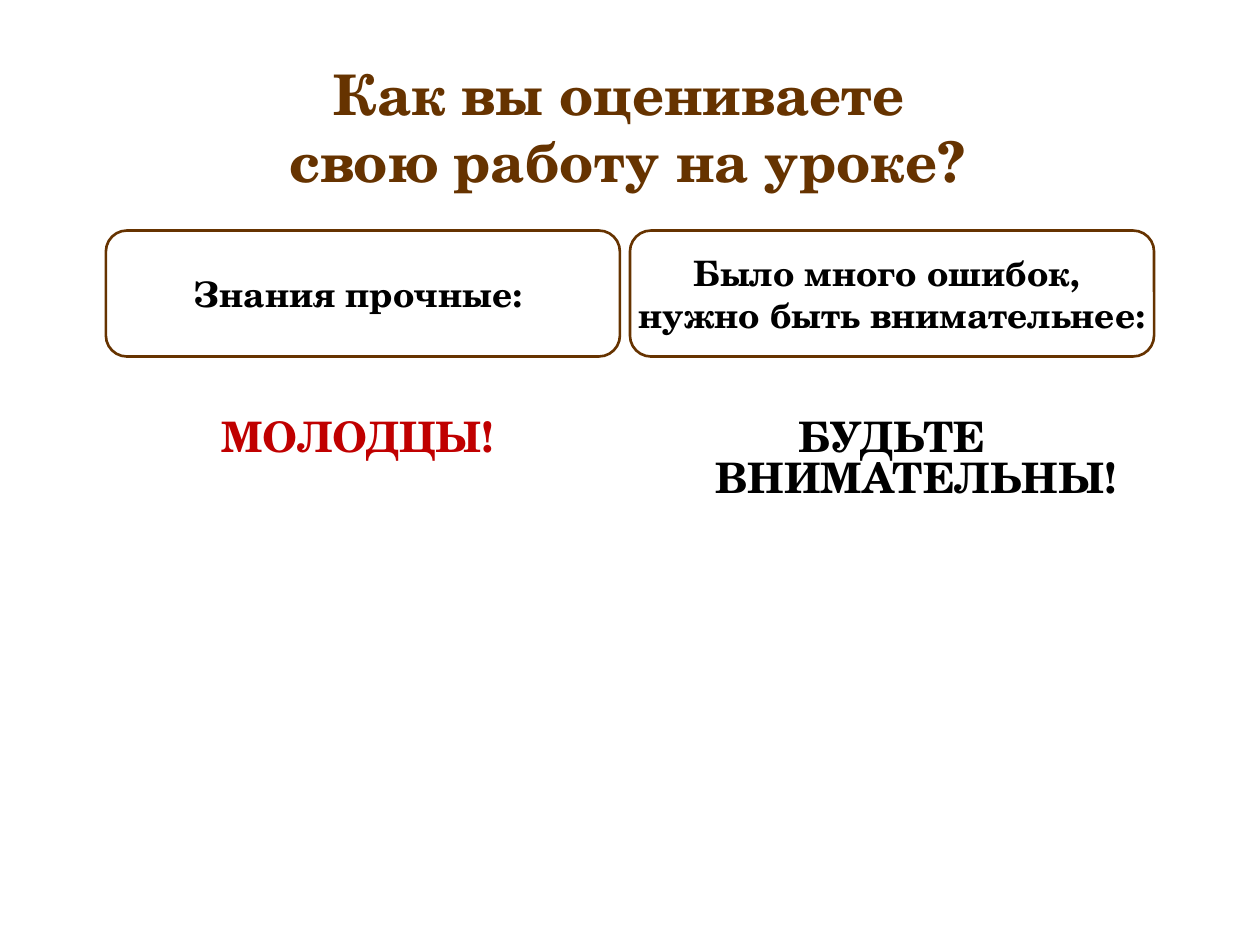
from dataclasses import dataclass

from pptx import Presentation
from pptx.dml.color import RGBColor
from pptx.enum.shapes import MSO_SHAPE as Shape
from pptx.enum.text import MSO_ANCHOR as Anchor, MSO_AUTO_SIZE as AutoSize, PP_ALIGN as Align
from pptx.util import Inches, Pt

WIDTH, HEIGHT = 10, 7.5
FONT = "TeX Gyre Schola"
BROWN, RED, BLACK = "663300", "C00000", "000000"
HANGING = Inches(0.38)
HEADING_TOP, HEADING_HEIGHT = 1.83, 1
ANSWER_TOP, ANSWER_HEIGHT = 3.25, 0.8


@dataclass
class Column:
    """A self-assessment with its heading and the teacher's answer."""
    left: float
    heading_width: float
    answer_width: float
    heading: str
    answer: str
    colour: str


COLUMNS = [
    Column(0.84, 4.08, 4, "Знания прочные: ", "МОЛОДЦЫ!", RED),
    Column(5, 4.16, 4.16, "Было много ошибок, \nнужно быть внимательнее:",
           "БУДЬТЕ ВНИМАТЕЛЬНЫ!", BLACK),
]


def rgb(value: str) -> RGBColor:
    """Turn a hex string into a colour."""
    return RGBColor.from_string(value)


def write(sp, text: str, size: int, colour: str, spacing: float = 1, hanging: bool = True,
          **frame) -> None:
    """Fill a shape with centred bold paragraphs."""
    tf = sp.text_frame
    tf.text = text
    for name, value in frame.items():
        setattr(tf, name, value)
    for p in tf.paragraphs:
        for name, value in {"alignment": Align.CENTER, "line_spacing": spacing}.items():
            setattr(p, name, value)
        if hanging:
            pPr = p._p.get_or_add_pPr()
            pPr.set("marL", str(HANGING))
            pPr.set("indent", str(-HANGING))
        for r in p.runs:
            for name, value in {"name": FONT, "size": Pt(size), "bold": True}.items():
                setattr(r.font, name, value)
            r.font.color.rgb = rgb(colour)


def add_box(s, left: float, top: float, width: float, height: float, outlined: bool):
    """Add an unfilled rounded box, outlined or bare."""
    sp = s.shapes.add_shape(Shape.ROUNDED_RECTANGLE, *map(Inches, (left, top, width, height)))
    sp.shadow.inherit = False
    sp.fill.background()
    if outlined:
        sp.line.color.rgb = rgb(BROWN)
        sp.line.width = Pt(1.5)
    else:
        sp.line.fill.background()
    return sp


def add_column(s, col: Column) -> None:
    """Draw the answer and the heading of one column."""
    sp = add_box(s, col.left, ANSWER_TOP, col.answer_width, ANSWER_HEIGHT, False)
    write(sp, col.answer, 24, col.colour, 0.8, vertical_anchor=Anchor.TOP, word_wrap=True)
    sp = add_box(s, col.left, HEADING_TOP, col.heading_width, HEADING_HEIGHT, True)
    write(sp, col.heading, 20, BLACK, vertical_anchor=Anchor.MIDDLE, word_wrap=False)


def add_title(s) -> None:
    """Place and format the title."""
    sp = s.shapes.title
    place = {"left": 0.25, "top": 0.42, "width": 9.46, "height": 1.18}
    for name, value in place.items():
        setattr(sp, name, Inches(value))
    write(sp, "Как вы оцениваете \nсвою работу на уроке?", 32, BROWN, hanging=False,
          vertical_anchor=Anchor.TOP, word_wrap=True, auto_size=AutoSize.SHAPE_TO_FIT_TEXT)


def main() -> None:
    """Build and save the slide."""
    prs = Presentation()
    prs.slide_width, prs.slide_height = Inches(WIDTH), Inches(HEIGHT)
    s = prs.slides.add_slide(prs.slide_layouts[5])
    for col in reversed(COLUMNS):
        add_column(s, col)
    add_title(s)
    prs.save("out.pptx")


if __name__ == "__main__":
    main()
